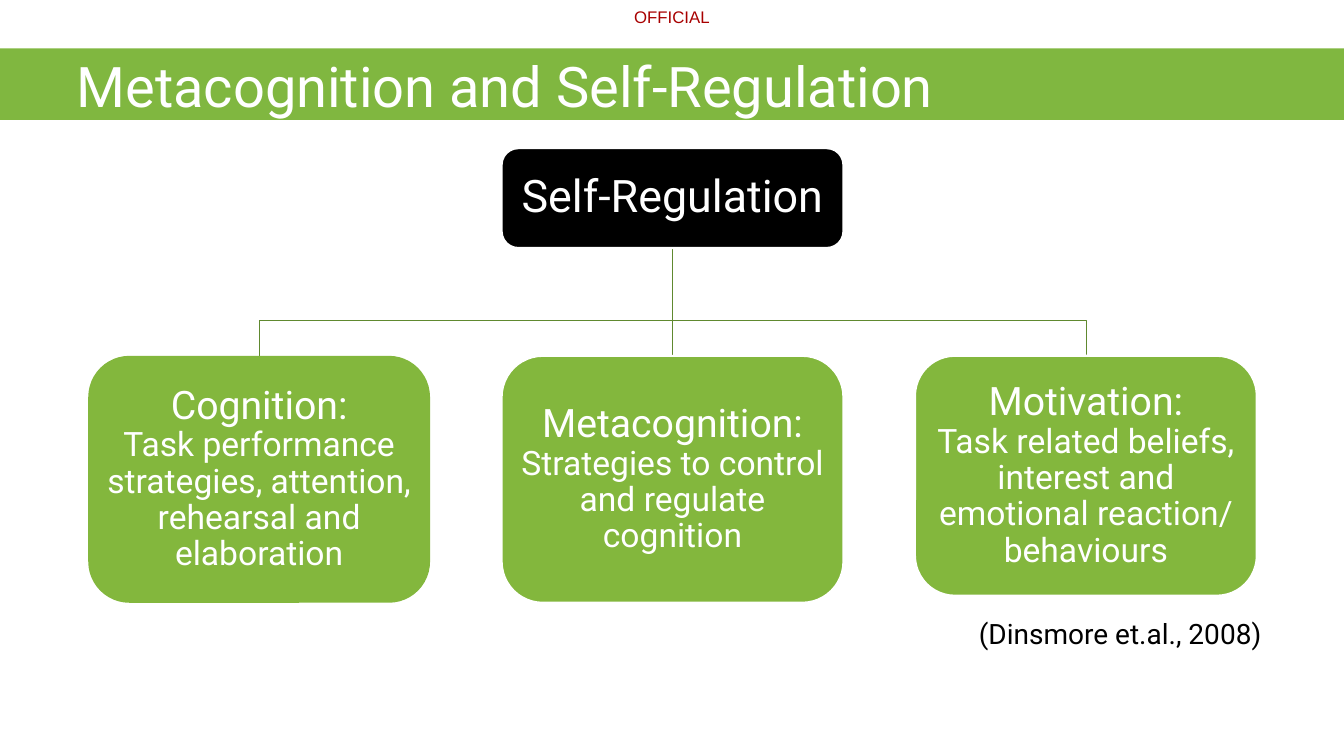
import pptx
import pptx.dml.color
import pptx.enum.shapes
import pptx.enum.text
import pptx.oxml.ns
import pptx.util
from pptx.util import Inches
from lxml import etree

SHAPE = pptx.enum.shapes.MSO_SHAPE
ALIGN = pptx.enum.text.PP_ALIGN
ANCHOR = pptx.enum.text.MSO_ANCHOR

WHITE, BLACK, RED = "FFFFFF", "000000", "A80000"
BANNER_GREEN, CARD_GREEN, LINE_GREEN = "80B740", "83B73D", "60892F"

CENTRE_X, CARD_STEP, CARD_W = 6.67, 4.1, 3.39
ROOT_TOP, ROOT_H = 1.47, 0.99
ROOT_BOTTOM = ROOT_TOP + ROOT_H
BAR_Y, CARD_TOP = 3.18, 3.53

# heading, description, height, outline
CARDS = [
    ("Cognition:", "Task performance strategies, attention, rehearsal and elaboration", 2.45, None),
    ("Metacognition:", "Strategies to control and regulate cognition", 2.45, WHITE),
    ("Motivation:", "Task related beliefs, interest and emotional reaction/ behaviours", 2.38, WHITE),
]


def rgb(value):
    return pptx.dml.color.RGBColor.from_string(value)


def set_line(line, color, width):
    line.color.rgb = rgb(color)
    line.width = pptx.util.Pt(width)


def write(sp, runs, color=WHITE, font="Roboto", align=ALIGN.LEFT, anchor=ANCHOR.TOP,
          insets=(0, 0, 0, 0), spacing=1.0, before=0, wrap=True):
    """Fill a shape with one paragraph; each (text, size) run starts a new line."""
    tf = sp.text_frame
    tf.word_wrap = wrap
    tf.vertical_anchor = anchor
    tf.margin_left, tf.margin_top, tf.margin_right, tf.margin_bottom = map(Inches, insets)
    p = tf.paragraphs[0]
    p.alignment = align
    p.line_spacing = spacing
    p.space_before = pptx.util.Pt(before)
    for i, (text, size) in enumerate(runs):
        if i:
            p.add_line_break()
        r = p.add_run()
        r.text = text
        r.font.name = font
        r.font.size = pptx.util.Pt(size)
        r.font.color.rgb = rgb(color)


def add_text(slide, box, runs, **fmt):
    write(slide.shapes.add_textbox(*map(Inches, box)), runs, **fmt)


def add_box(slide, kind, box, fill, runs, outline=None, **fmt):
    sp = slide.shapes.add_shape(kind, *map(Inches, box))
    sp.shadow.inherit = False
    sp.fill.solid()
    sp.fill.fore_color.rgb = rgb(fill)
    if outline:
        set_line(sp.line, outline, 1.5)
    else:
        sp.line.fill.background()
    write(sp, runs, **fmt)


def add_node(slide, box, fill, runs, outline):
    add_box(slide, SHAPE.ROUNDED_RECTANGLE, box, fill, runs, outline, align=ALIGN.CENTER,
            anchor=ANCHOR.MIDDLE, insets=(0.02,) * 4, spacing=0.9)


def add_trunk(slide):
    x = Inches(CENTRE_X)
    line = slide.shapes.add_connector(pptx.enum.shapes.MSO_CONNECTOR.STRAIGHT,
                                      x, Inches(ROOT_BOTTOM), x, Inches(CARD_TOP))
    set_line(line.line, LINE_GREEN, 0.5)
    etree.SubElement(line._element.spPr, pptx.oxml.ns.qn("a:effectLst"))


def add_branch(slide, x):
    """Draw the bent line from the root down to a card centred on x."""
    points = [(CENTRE_X, BAR_Y), (x, BAR_Y), (x, CARD_TOP)]
    builder = slide.shapes.build_freeform(Inches(CENTRE_X), Inches(ROOT_BOTTOM))
    builder.add_line_segments([(Inches(px), Inches(py)) for px, py in points], close=False)
    sp = builder.convert_to_shape()
    sp.shadow.inherit = False
    sp.fill.background()
    set_line(sp.line, LINE_GREEN, 0.5)


def main():
    prs = pptx.Presentation()
    prs.slide_width, prs.slide_height = Inches(13.33), Inches(7.5)
    slide = prs.slides.add_slide(prs.slide_layouts[6])

    add_text(slide, (6.29, 0.07, 0.8, 0.2), [("OFFICIAL", 12)],
             color=RED, font="Arial", wrap=False)
    add_box(slide, SHAPE.RECTANGLE, (0, 0.48, 13.33, 0.71), BANNER_GREEN,
            [("Metacognition and Self-Regulation", 40)], insets=(0.76, 0.03, 0, 0), before=2.3)

    add_trunk(slide)
    for side in (-1, 1):
        add_branch(slide, CENTRE_X + side * CARD_STEP)

    left = CENTRE_X - CARD_W / 2
    add_node(slide, (left, ROOT_TOP, CARD_W, ROOT_H), BLACK, [("Self-Regulation", 32)], WHITE)
    for i, (heading, description, height, outline) in enumerate(CARDS):
        add_node(slide, (left + (i - 1) * CARD_STEP, CARD_TOP, CARD_W, height), CARD_GREEN,
                 [(heading, 28), (description, 24)], outline)

    add_text(slide, (9.61, 6.07, 3.06, 0.44), [("(Dinsmore et.al., 2008)", 20)],
             color=BLACK, insets=(0.1, 0.05, 0.1, 0.05))
    prs.save("out.pptx")


if __name__ == "__main__":
    main()
